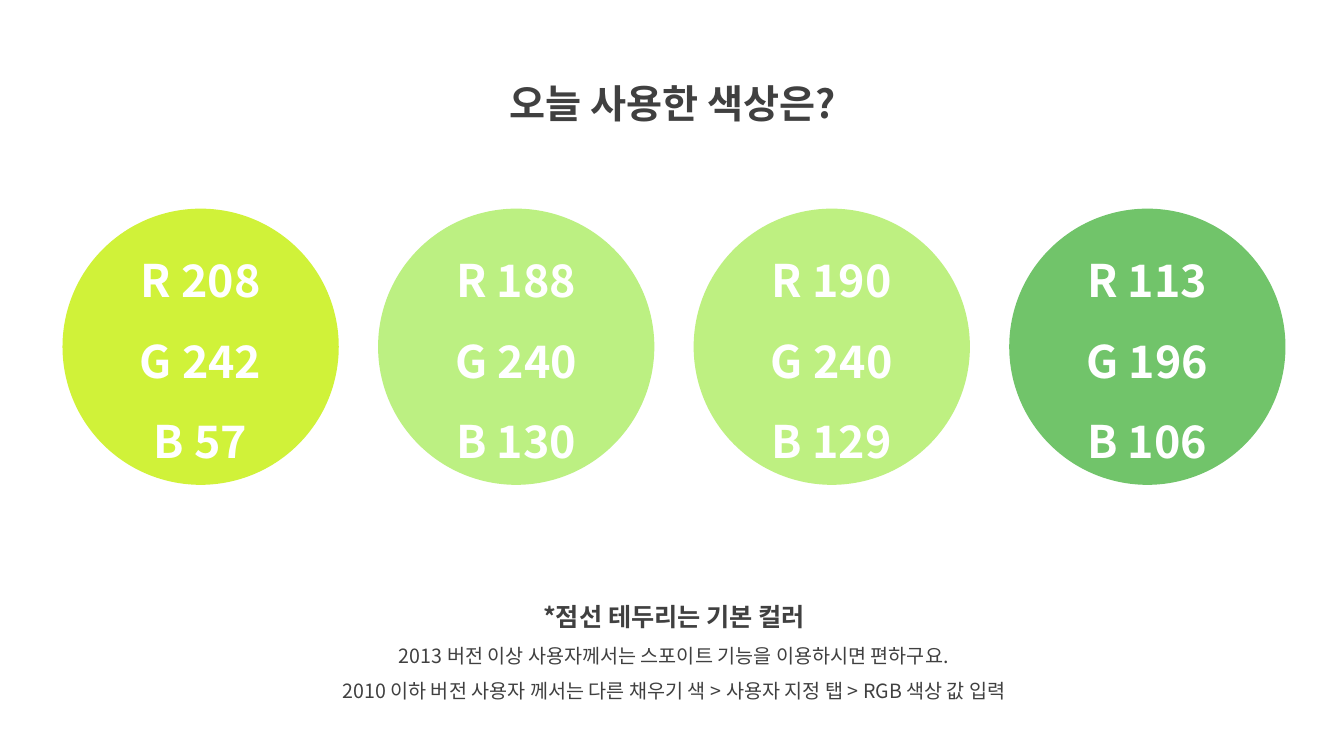
from pptx import Presentation
from pptx.dml.color import RGBColor
from pptx.enum.shapes import MSO_SHAPE
from pptx.enum.text import MSO_ANCHOR, MSO_AUTO_SIZE, PP_ALIGN
from pptx.oxml.ns import qn
from pptx.util import Pt
from lxml.etree import SubElement

PX = 9144  # EMU per px, 100 px to the inch

THEME = {
    "font": "Noto Sans CJK KR",
    "ink": RGBColor(64, 64, 64),
    "white": RGBColor(255, 255, 255),
    "swatches": [(208, 242, 57), (188, 240, 130), (190, 240, 129), (113, 196, 106)],
    "title": 28,
    "swatch": 32,
    "note_head": 18,
    "note": 14,
}


def write_lines(frame, lines, color):
    """Fill a text frame with centred lines of (text, size, bold)."""
    frame.word_wrap = True
    for index, (text, size, bold) in enumerate(lines):
        para = frame.add_paragraph() if index else frame.paragraphs[0]
        para.alignment = PP_ALIGN.CENTER
        para.line_spacing = 1.5
        span = para.add_run()
        span.text = text
        span.font.name = THEME["font"]
        span.font.size = Pt(size)
        span.font.bold = bold
        span.font.color.rgb = color
        # Korean glyphs take the East Asian typeface
        east_asian = SubElement(span.font._element, qn("a:ea"))
        east_asian.set("typeface", THEME["font"])


def add_text(left, top, width, height, lines):
    box = page.shapes.add_textbox(left * PX, top * PX, width * PX, height * PX)
    write_lines(box.text_frame, lines, THEME["ink"])
    box.text_frame.auto_size = MSO_AUTO_SIZE.SHAPE_TO_FIT_TEXT


deck = Presentation()
deck.slide_width = 1333 * PX
deck.slide_height = 750 * PX
page = deck.slides.add_slide(deck.slide_layouts[6])

# Title
add_text(436, 50, 463, 72, [("오늘 사용한 색상은?", THEME["title"], True)])

# Notes on picking colours
add_text(269, 577, 799, 126, [
    ("*점선 테두리는 기본 컬러", THEME["note_head"], True),
    ("2013 버전 이상 사용자께서는 스포이트 기능을 이용하시면 편하구요.", THEME["note"], False),
    ("2010 이하 버전 사용자 께서는 다른 채우기 색 > 사용자 지정 탭 > RGB 색상 값 입력",
     THEME["note"], False),
])

# Colour circles, each labelled with its own channel values
DIAMETER, PITCH = 274, 313
for column, channels in enumerate(THEME["swatches"]):
    circle = page.shapes.add_shape(
        MSO_SHAPE.OVAL, (62 + column * PITCH) * PX, 207 * PX, DIAMETER * PX, DIAMETER * PX)
    circle.shadow.inherit = False
    circle.fill.solid()
    circle.fill.fore_color.rgb = RGBColor(*channels)
    circle.line.fill.background()
    circle.text_frame.vertical_anchor = MSO_ANCHOR.MIDDLE
    labels = [(f"{name} {value}", THEME["swatch"], True) for name, value in zip("RGB", channels)]
    write_lines(circle.text_frame, labels, THEME["white"])

deck.save("out.pptx")
